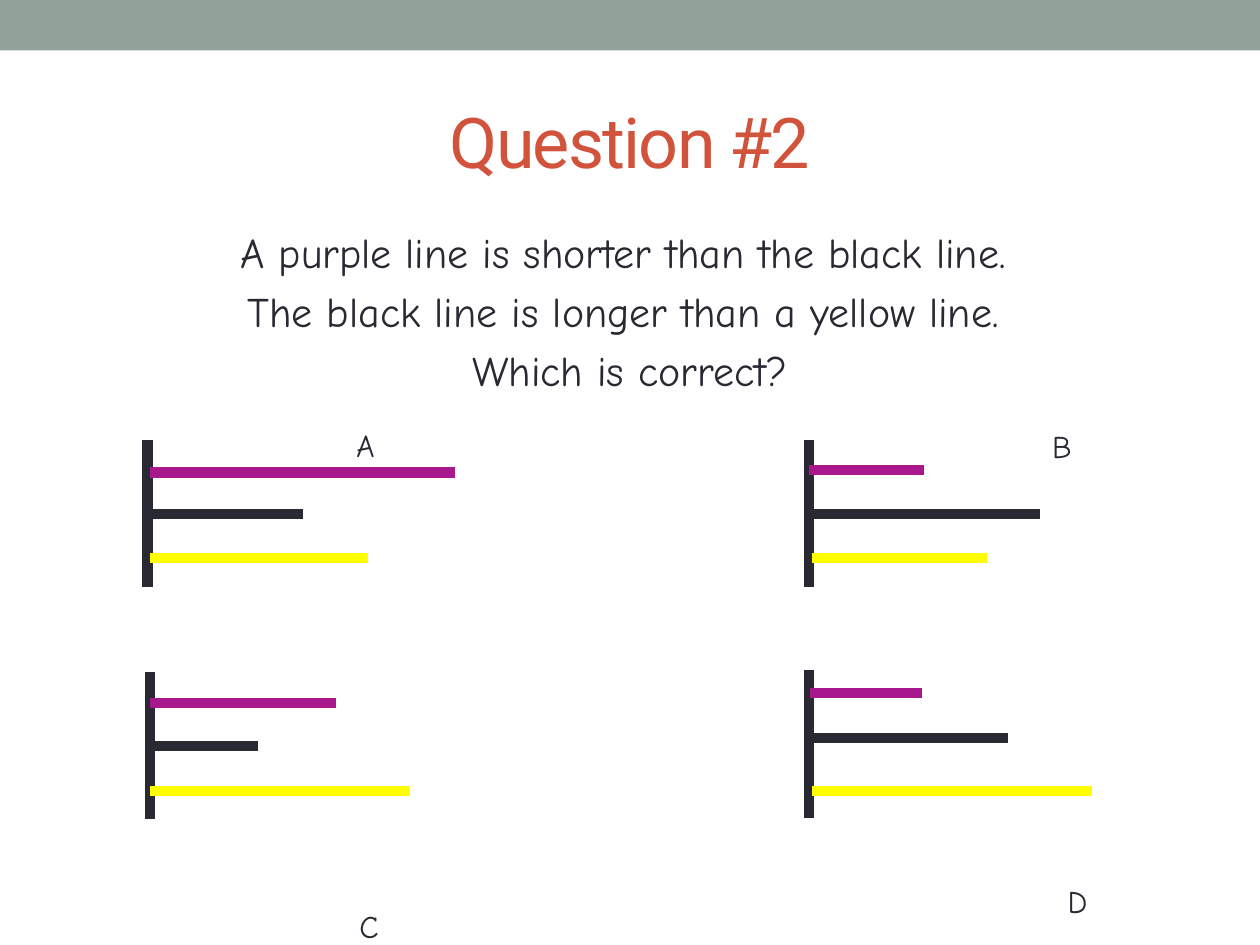
from pptx import Presentation
from pptx.dml.color import RGBColor
from pptx.enum.shapes import MSO_CONNECTOR, MSO_SHAPE
from pptx.enum.text import MSO_ANCHOR, PP_ALIGN
from pptx.oxml.ns import qn
from pptx.util import Cm, Pt
from lxml.etree import SubElement

SAGE = RGBColor(0x93, 0xA2, 0x99)
RED = RGBColor(0xD2, 0x53, 0x3C)
INK = RGBColor(0x29, 0x29, 0x34)
PURPLE = RGBColor(0xA9, 0x17, 0x8D)
YELLOW = RGBColor(0xFF, 0xFF, 0x00)


def write(shape, lines, look, color, gap=0):
    """Fill a shape with centred paragraphs in one font."""
    frame = shape.text_frame
    frame.word_wrap = True
    frame.text = "\n".join(lines)
    for para in frame.paragraphs:
        para.alignment = PP_ALIGN.CENTER
        para.space_before = Pt(gap)
        font = para.runs[0].font
        for name, value in look.items():
            setattr(font, name, value)
        font.color.rgb = color


def stroke(x1, y1, x2, y2, color):
    """Draw one thick line without a shadow."""
    ends = [Cm(v) for v in (x1, y1, x2, y2)]
    line = slide.shapes.add_connector(MSO_CONNECTOR.STRAIGHT, *ends)
    line.line.color.rgb = color
    line.line.width = Pt(6)
    SubElement(line._element.spPr, qn("a:effectLst"))


deck = Presentation()
deck.slide_width, deck.slide_height = Cm(25.4), Cm(19.05)
slide = deck.slides.add_slide(deck.slide_layouts[5])

# Top band
band = slide.shapes.add_shape(MSO_SHAPE.RECTANGLE, 0, 0, Cm(25.4), Cm(1.02))
band.shadow.inherit = False
band.fill.solid()
band.fill.fore_color.rgb = SAGE
band.line.fill.background()

# Title
title = slide.shapes.title
place = {"left": 1.27, "top": 1.47, "width": 22.86, "height": 2.74}
for name, value in place.items():
    setattr(title, name, Cm(value))
write(title, ["Question #2"], {"name": "Roboto", "size": Pt(40)}, RED)
title.text_frame.vertical_anchor = MSO_ANCHOR.MIDDLE
title.text_frame.paragraphs[0].runs[0].font._element.set("spc", "-100")

# Question text
body = slide.shapes.add_textbox(Cm(1.27), Cm(4.45), Cm(22.86), Cm(13.54))
write(body, ["A purple line is shorter than the black line. ",
             "The black line is longer than a yellow line. ",
             "Which is correct?"],
      {"name": "Comic Neue", "size": Pt(24)}, INK, gap=4.8)

# Answers: letter, its box corner, axis x and top, bars as (start, end, y)
answers = [
    ("A", 6.1, 8.46, 2.97, 8.86,
     [(3.02, 9.17, 9.53), (3.02, 6.1, 10.36), (3.02, 7.42, 11.25)]),
    ("B", 20.14, 8.48, 16.31, 8.86,
     [(16.31, 18.62, 9.47), (16.31, 20.96, 10.36), (16.36, 19.89, 11.25)]),
    ("C", 6.17, 18.16, 3.02, 13.54,
     [(3.02, 6.78, 14.17), (3.02, 5.21, 15.04), (3.02, 8.26, 15.95)]),
    ("D", 20.45, 17.65, 16.31, 13.51,
     [(16.33, 18.59, 13.97), (16.36, 20.32, 14.88), (16.36, 22.02, 15.95)]),
]
for letter, left, top, axis, start, bars in answers:
    stroke(axis, start, axis, start + 2.97, INK)
    for (x1, x2, y), color in zip(bars, (PURPLE, INK, YELLOW)):
        stroke(x1, y, x2, y, color)
    label = slide.shapes.add_textbox(Cm(left), Cm(top), Cm(2.54), Cm(1.02))
    write(label, [letter], {"name": "Comic Neue", "size": Pt(18)}, INK)

deck.save("out.pptx")
